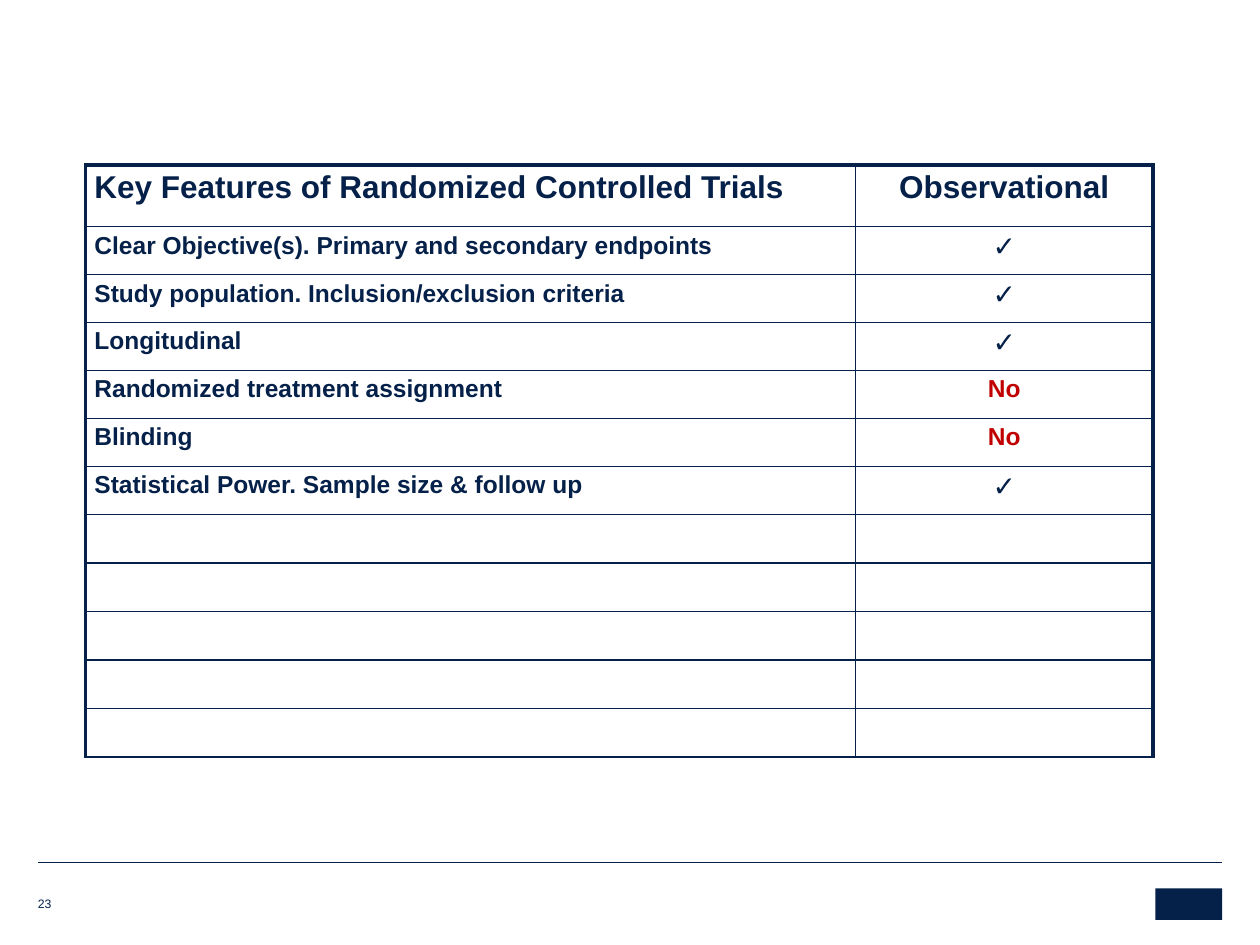
from lxml.etree import SubElement
from pptx import Presentation
from pptx.dml.color import RGBColor
from pptx.enum.shapes import MSO_CONNECTOR, MSO_SHAPE
from pptx.enum.text import MSO_ANCHOR, PP_ALIGN
from pptx.oxml.ns import qn
from pptx.util import Inches, Pt

COLORS = {"navy": "052049", "red": "C00000"}
FONT = "Arial"
CHECK = "✓"
HEADER = ("Key Features of Randomized Controlled Trials", "Observational")
FEATURES = [
    ("Clear Objective(s). Primary and secondary endpoints", CHECK),
    ("Study population. Inclusion/exclusion criteria", CHECK),
    ("Longitudinal", CHECK),
    ("Randomized treatment assignment", "No"),
    ("Blinding", "No"),
    ("Statistical Power. Sample size & follow up", CHECK),
]
EMPTY_ROWS = 5


def color(name):
    """Return the named palette color."""
    return RGBColor.from_string(COLORS[name])


def format_text(paragraph, size, color_name="navy", bold=False):
    """Format every run of a paragraph."""
    for run in paragraph.runs:
        run.font.name = FONT
        run.font.size = Pt(size)
        run.font.bold = bold
        run.font.color.rgb = color(color_name)


def set_borders(cell, widths):
    """Draw the left, right, top and bottom borders of a cell."""
    properties = cell._tc.get_or_add_tcPr()
    for index, (side, width) in enumerate(zip("LRTB", widths)):
        line = properties.makeelement(qn(f"a:ln{side}"), {"w": str(Pt(width))})
        fill = SubElement(line, qn("a:solidFill"))
        SubElement(fill, qn("a:srgbClr"), val=COLORS["navy"])
        properties.insert(index, line)


def fill_cell(cell, text, size, centered):
    """Write one table cell with its margins and text format."""
    cell.fill.background()
    cell.margin_left = cell.margin_right = Inches(0.07)
    cell.margin_top = cell.margin_bottom = Inches(0.04)
    cell.text_frame.text = text
    paragraph = cell.text_frame.paragraphs[0]
    paragraph.alignment = PP_ALIGN.CENTER if centered else PP_ALIGN.LEFT
    is_check = text == CHECK
    format_text(paragraph, 16 if is_check else size,
                "red" if text == "No" else "navy", bold=not is_check)


def add_feature_table(slide, left, top, width, height):
    """Add the table that compares trial features with observational studies."""
    rows = [HEADER] + FEATURES + [("", "")] * EMPTY_ROWS
    frame = slide.shapes.add_table(len(rows), 2, Inches(left), Inches(top),
                                   Inches(width), Inches(height))
    table = frame.table
    table.first_row = table.horz_banding = False
    feature_width, header_height = 6.11, 0.49
    table.columns[0].width = Inches(feature_width)
    table.columns[1].width = Inches(width - feature_width)
    row_height = (height - header_height) / (len(rows) - 1)
    for row_index, texts in enumerate(rows):
        is_header = row_index == 0
        table.rows[row_index].height = Inches(header_height if is_header else row_height)
        for column_index, text in enumerate(texts):
            cell = table.cell(row_index, column_index)
            fill_cell(cell, text, 18 if is_header else 14, column_index == 1)
            set_borders(cell, (2.25 if column_index == 0 else 1,
                               2.25 if column_index == 1 else 1,
                               2.25 if is_header else 1, 1))


def add_footer(slide, left, top, width):
    """Add the footer rule, the page number and the emblem block."""
    rule = slide.shapes.add_connector(MSO_CONNECTOR.STRAIGHT, Inches(left), Inches(top),
                                      Inches(left + width), Inches(top))
    rule.line.color.rgb = color("navy")
    rule.line.width = Pt(0.25)
    SubElement(rule._element.spPr, qn("a:effectLst"))

    number = slide.shapes.add_textbox(Inches(left), Inches(top + 0.22),
                                      Inches(0.27), Inches(0.17))
    text_frame = number.text_frame
    text_frame.word_wrap = True
    text_frame.vertical_anchor = MSO_ANCHOR.BOTTOM
    text_frame.margin_left = text_frame.margin_right = 0
    text_frame.margin_top = text_frame.margin_bottom = 0
    text_frame.text = "23"
    format_text(text_frame.paragraphs[0], 7)

    emblem_width = 0.53
    emblem = slide.shapes.add_shape(MSO_SHAPE.RECTANGLE,
                                    Inches(left + width - emblem_width), Inches(top + 0.21),
                                    Inches(emblem_width), Inches(0.25))
    emblem.shadow.inherit = False
    emblem.fill.solid()
    emblem.fill.fore_color.rgb = color("navy")
    emblem.line.fill.background()


def main():
    """Build and save the presentation."""
    presentation = Presentation()
    presentation.slide_width = Inches(10)
    presentation.slide_height = Inches(7.5)
    slide = presentation.slides.add_slide(presentation.slide_layouts[6])
    add_feature_table(slide, 0.68, 1.31, 8.47, 4.68)
    add_footer(slide, 0.3, 6.84, 9.4)
    presentation.save("out.pptx")


if __name__ == "__main__":
    main()
